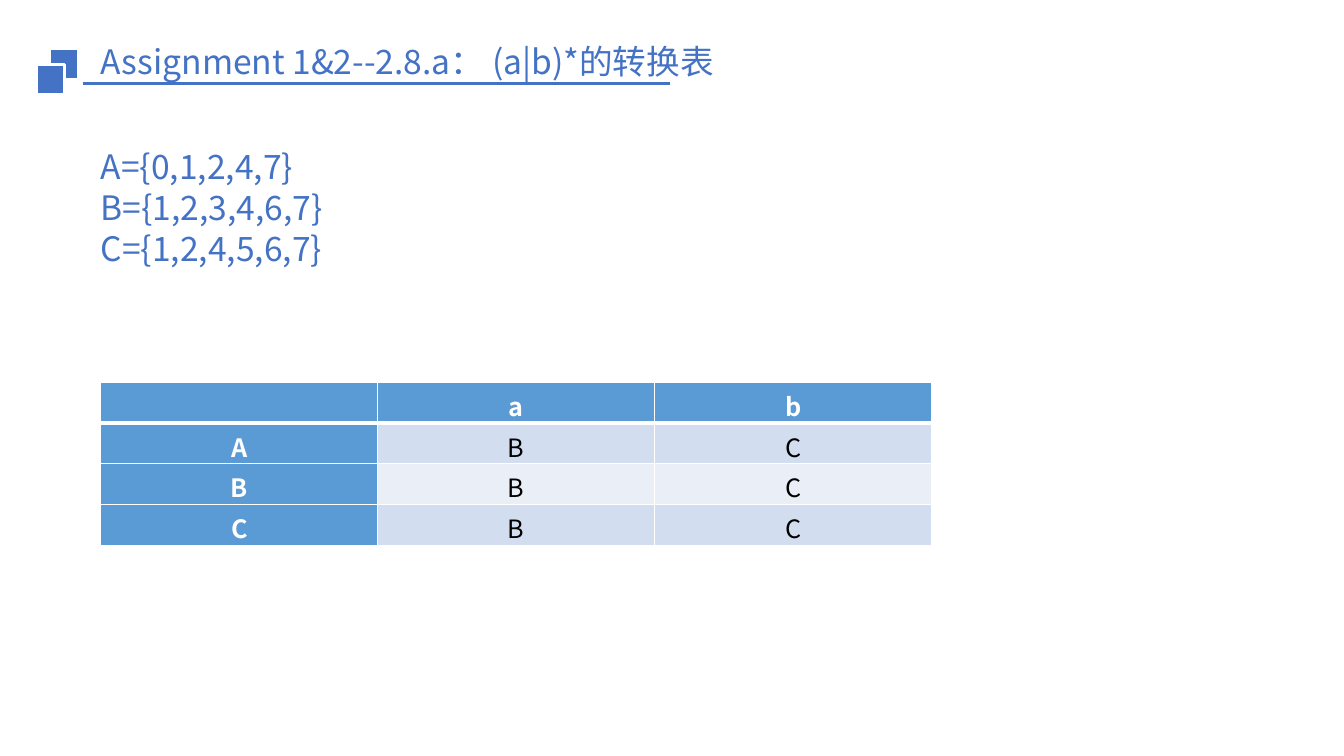
"""Build the transition table slide for (a|b)*."""
from dataclasses import dataclass

from lxml import etree
from pptx import Presentation
from pptx import util as u
from pptx.dml.color import RGBColor
from pptx.enum import shapes, text
from pptx.oxml.ns import qn


@dataclass(frozen=True)
class Theme:
    font: str = "Noto Sans CJK SC"
    accent: str = "4472C4"
    header: str = "5B9BD5"
    bands: tuple = ("D2DEEF", "EAEFF7")
    white: str = "FFFFFF"
    black: str = "000000"
    body_size: int = 24
    cell_size: int = 18


theme = Theme()
PX = 9144


def write(frame, content, size=theme.body_size, color=theme.accent, bold=False,
          align=text.PP_ALIGN.LEFT, spacing=None):
    for index, line in enumerate(content.split("\n")):
        para = frame.paragraphs[0] if index == 0 else frame.add_paragraph()
        para.alignment = align
        para.line_spacing = spacing
        span = para.add_run()
        span.text = line
        span.font.name = theme.font
        span.font.size = u.Pt(size)
        span.font.bold = bold
        span.font.color.rgb = RGBColor.from_string(color)
        east_asian = etree.SubElement(span.font._element, qn("a:ea"))
        east_asian.set("typeface", theme.font)


def set_border(cell, side, width):
    line = etree.SubElement(cell._tc.get_or_add_tcPr(), qn(f"a:{side}"), w=str(u.Pt(width)))
    fill = etree.SubElement(line, qn("a:solidFill"))
    etree.SubElement(fill, qn("a:srgbClr"), val=theme.white)


deck = Presentation()
deck.slide_width = 1333 * PX
deck.slide_height = 750 * PX
page = deck.slides.add_slide(deck.slide_layouts[6])

underline = page.shapes.add_connector(
    shapes.MSO_CONNECTOR.STRAIGHT, 82 * PX, 83 * PX, 665 * PX, 83 * PX)
underline.line.color.rgb = RGBColor.from_string(theme.accent)
underline.line.width = u.Pt(2.25)
etree.SubElement(underline._element.spPr, qn("a:effectLst"))

for left, top in ((50, 49), (37, 64)):
    square = page.shapes.add_shape(
        shapes.MSO_SHAPE.RECTANGLE, left * PX, top * PX, 27 * PX, 29 * PX)
    square.shadow.inherit = False
    square.fill.solid()
    square.fill.fore_color.rgb = RGBColor.from_string(theme.accent)
    square.line.color.rgb = RGBColor.from_string(theme.white)
    square.line.width = u.Pt(1.5)

title = page.shapes.add_textbox(90 * PX, 35 * PX, 800 * PX, 50 * PX).text_frame
title.word_wrap = True
title.vertical_anchor = text.MSO_ANCHOR.MIDDLE
write(title, "Assignment 1&2--2.8.a： (a|b)*的转换表", spacing=u.Pt(29))

state_sets = page.shapes.add_textbox(90 * PX, 140 * PX, 1195 * PX, 239 * PX).text_frame
state_sets.word_wrap = True
write(state_sets, "A={0,1,2,4,7}\nB={1,2,3,4,6,7}\nC={1,2,4,5,6,7}", spacing=u.Pt(29))

transitions = (("", "a", "b"), ("A", "B", "C"), ("B", "B", "C"), ("C", "B", "C"))
table = page.shapes.add_table(4, 3, 100 * PX, 379 * PX, 824 * PX, 162 * PX).table
for row, states in enumerate(transitions):
    for column, state in enumerate(states):
        cell = table.cell(row, column)
        heading = row == 0 or column == 0
        cell.vertical_anchor = text.MSO_ANCHOR.TOP
        for side, width in (("lnL", 1), ("lnR", 1), ("lnT", 3 if row == 1 else 1),
                            ("lnB", 3 if row == 0 else 1)):
            set_border(cell, side, width)
        cell.fill.solid()
        cell.fill.fore_color.rgb = RGBColor.from_string(
            theme.header if heading else theme.bands[(row - 1) % 2])
        if state:
            write(cell.text_frame, state, size=theme.cell_size, bold=heading,
                  color=theme.white if heading else theme.black,
                  align=text.PP_ALIGN.CENTER)

deck.save("out.pptx")
